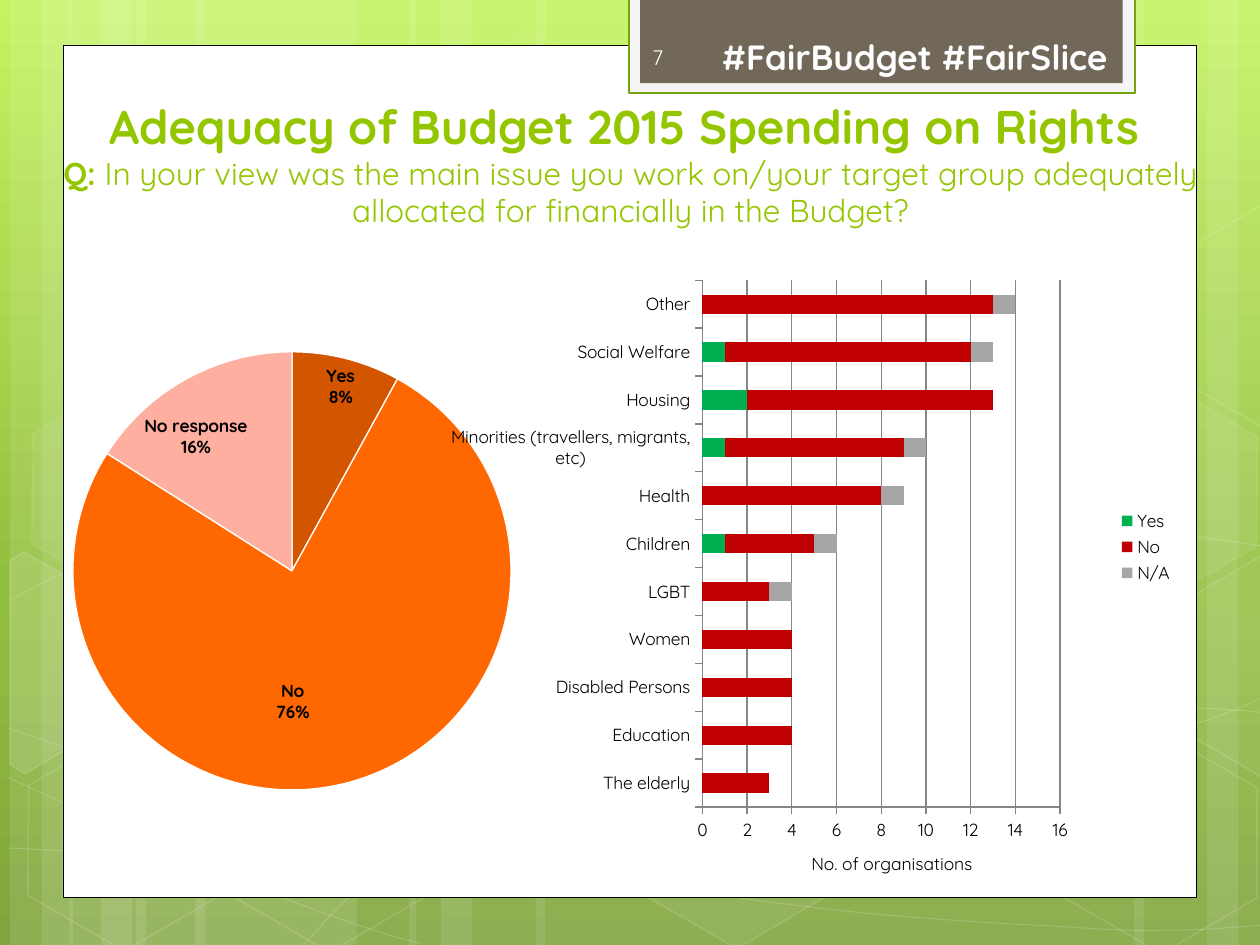
from copy import deepcopy

from lxml.etree import SubElement
from pptx import Presentation
from pptx.chart.data import CategoryChartData
from pptx.dml.color import RGBColor
from pptx.enum.chart import XL_CHART_TYPE, XL_LABEL_POSITION, XL_LEGEND_POSITION, XL_TICK_MARK
from pptx.enum.shapes import MSO_SHAPE
from pptx.enum.text import MSO_ANCHOR, MSO_AUTO_SIZE, PP_ALIGN
from pptx.oxml.ns import qn
from pptx.util import Inches, Pt

FONT = "Quicksand"
GREEN = "94C600"

# left, width of the pale vertical bands
BANDS = [(1.08, 1.75), (0.08, 0.5), (0.33, 0.83), (1.55, 1.75), (0.55, 0.5), (0.8, 0.83),
         (7.33, 1.75), (9.58, 0.5), (9, 0.83), (4.25, 3.08), (3.25, 0.5), (3.5, 0.83)]
# start point followed by three points for each Bezier segment
CURVES = [
    [(0.07, 6.73), (0.61, 6.76), (1.15, 6.79), (1.9, 6.78), (2.65, 6.77), (3.58, 6.75),
     (4.58, 6.65), (5.58, 6.55), (7, 6.36), (7.92, 6.17), (8.83, 5.98), (9.77, 5.68), (10.07, 5.51)],
    [(0.07, 4.77), (0.36, 4.61), (0.65, 4.46), (1.21, 4.31), (1.78, 4.16), (2.59, 3.94),
     (3.47, 3.87), (4.36, 3.8), (5.44, 3.79), (6.54, 3.87), (7.64, 3.95), (9.47, 4.26), (10.07, 4.34)],
    [(0.06, 6.17), (1.27, 6.72), (2.47, 7.27), (3.34, 7.49)],
    [(0.07, 5.78), (0.38, 5.89), (0.7, 6), (1.28, 6.16), (1.86, 6.31), (2.73, 6.56), (3.57, 6.73),
     (4.4, 6.9), (5.45, 7.08), (6.28, 7.18), (7.11, 7.29), (8, 7.33), (8.53, 7.36),
     (9.05, 7.4), (9.19, 7.38), (9.45, 7.38), (9.71, 7.37), (9.89, 7.35), (10.07, 7.34)],
    [(2.42, 7.49), (2.6, 7.29), (2.78, 7.09), (3.02, 6.91), (3.26, 6.73), (3.6, 6.53), (3.88, 6.39),
     (4.16, 6.25), (4.33, 6.19), (4.7, 6.09), (5.06, 5.99), (5.73, 5.85), (6.08, 5.78),
     (6.44, 5.71), (6.49, 5.71), (6.8, 5.69), (7.11, 5.66), (7.6, 5.63), (7.94, 5.62),
     (8.29, 5.61), (8.86, 5.62), (8.86, 5.62), (9.08, 5.62), (9.3, 5.62), (9.53, 5.62),
     (9.71, 5.63), (9.88, 5.64), (9.97, 5.65), (10.06, 5.66), (10.03, 5.65), (10.06, 5.66)],
]
# left, top, fill opacity, line opacity (percent)
HEXAGONS = [(3.34, 0.36, 4, 8), (4.97, 5.89, 6, 12), (0.11, 5.91, 0, 12), (0.14, 3.12, 7, 8),
            (1.74, 5.92, 0, 12), (7.53, 4.53, 10, 12), (8.34, 5.93, 0, 12), (8.34, 3.14, 7, 8)]
# corner points, fill opacity of the hexagons cut by the slide edge
CUT_HEXAGONS = [
    ([(0.08, 4.45), (0.19, 4.38), (0.96, 4.82), (0.95, 5.7), (0.2, 6.14), (0.08, 6.07)], 10),
    ([(9.26, 4.85), (10.01, 4.41), (10.09, 4.46), (10.09, 6.13), (10.02, 6.17), (9.26, 5.73)], 4),
    ([(9.26, 2.07), (10.01, 1.63), (10.1, 1.68), (10.09, 3.35), (10.02, 3.39), (9.26, 2.95)], 0),
]
# wedge colour and label shift as fractions of the chart
WEDGES = [("D45500", 0.02, 0), ("FF6700", -0.07, -0.09), ("FFAFA0", -0.09, 0.05)]


def color(value):
    return RGBColor.from_string(value)


def box(left, top, width, height):
    return [Inches(length) for length in (left, top, width, height)]


def set_all(target, **values):
    for name, value in values.items():
        setattr(target, name, value)


def set_opacity(properties, percent):
    for rgb in properties.iter(qn("a:srgbClr")):
        if percent < 100:
            SubElement(rgb, qn("a:alpha")).set("val", str(percent * 1000))


def paint(shape, fill=None, line=None, width=1, fill_opacity=100, line_opacity=100):
    shape.shadow.inherit = False
    if fill and fill_opacity:
        shape.fill.solid()
        shape.fill.fore_color.rgb = color(fill)
        set_opacity(shape._element.spPr, fill_opacity)
    else:
        shape.fill.background()
    if line:
        shape.line.color.rgb = color(line)
        shape.line.width = Pt(width)
        set_opacity(shape._element.spPr.find(qn("a:ln")), line_opacity)
    else:
        shape.line.fill.background()


def style_font(font, size, hex_color="000000", bold=False):
    set_all(font, name=FONT, size=Pt(size), bold=bold)
    font.color.rgb = color(hex_color)


def add_rectangle(slide, bounds, **style):
    paint(slide.shapes.add_shape(MSO_SHAPE.RECTANGLE, *box(*bounds)), **style)


def add_outline(slide, points, close, **style):
    (start, *rest) = [(Inches(x), Inches(y)) for x, y in points]
    builder = slide.shapes.build_freeform(*start)
    builder.add_line_segments(rest, close=close)
    shape = builder.convert_to_shape()
    paint(shape, line="FFFFFF", **style)
    return shape


def bend(shape):
    """Turn each three straight segments into one cubic Bezier."""
    outline = next(shape._element.iter(qn("a:moveTo"))).getparent()
    segments = outline.findall(qn("a:lnTo"))
    for first in range(0, len(segments), 3):
        curve = SubElement(outline, qn("a:cubicBezTo"))
        for segment in segments[first:first + 3]:
            curve.append(segment[0])
            outline.remove(segment)


def add_backdrop(slide):
    fill = slide.background.fill
    fill.gradient()
    fill.gradient_angle = 270
    stop_list = next(slide._element.iter(qn("a:gsLst")))
    stop_list.append(deepcopy(stop_list[0]))
    for stop, (position, value) in zip(fill.gradient_stops, [(0, "C3F35F"), (0.62, "93BF3F"), (1, "81A53E")]):
        stop.position = position
        stop.color.rgb = color(value)
    for left, width in BANDS:
        add_rectangle(slide, (left, 0, width, 7.5), fill="FFFFFF", fill_opacity=10)
    for curve in CURVES:
        bend(add_outline(slide, curve, False, width=0.5, line_opacity=20))
    for left, top, fill_opacity, line_opacity in HEXAGONS:
        hexagon = slide.shapes.add_shape(MSO_SHAPE.HEXAGON, *box(left, top, 1.75, 1.52))
        hexagon.rotation = 30
        hexagon.adjustments[0] = 0.285
        paint(hexagon, "FFFFFF", "FFFFFF", 1, fill_opacity, line_opacity)
    for points, opacity in CUT_HEXAGONS:
        add_outline(slide, points, True, fill="FFFFFF", fill_opacity=opacity, line_opacity=12)


def add_text(slide, bounds, text, size, hex_color, bold=False, align=PP_ALIGN.LEFT, anchor=MSO_ANCHOR.MIDDLE):
    frame = slide.shapes.add_textbox(*box(*bounds)).text_frame
    set_all(frame, word_wrap=True, vertical_anchor=anchor)
    paragraph = frame.paragraphs[0]
    paragraph.alignment = align
    run = paragraph.add_run()
    run.text = text
    style_font(run.font, size, hex_color, bold)


def add_header_tab(slide, left, top):
    add_rectangle(slide, (left, top, 4.02, 0.76), fill="F5F5F5", line="74A510", width=1.25)
    add_rectangle(slide, (left + 0.09, top, 3.83, 0.68), fill="71685A")
    add_text(slide, (left + 0.17, top + 0.27, 3.73, 0.4), "#FairBudget #FairSlice", 20, "FEFEFE", True,
             PP_ALIGN.RIGHT)
    add_text(slide, (left + 0.09, top + 0.27, 1.46, 0.4), "7", 12, "FEFEFE")


def add_title(slide, bounds):
    title = slide.shapes.title
    slide.shapes._spTree.append(title._element)
    set_all(title, **dict(zip(("left", "top", "width", "height"), box(*bounds))))
    frame = title.text_frame
    set_all(frame, auto_size=MSO_AUTO_SIZE.NONE, word_wrap=True, vertical_anchor=MSO_ANCHOR.BOTTOM,
            margin_bottom=Inches(0.36))
    paragraph = frame.paragraphs[0]
    paragraph.alignment = PP_ALIGN.CENTER
    question = ("In your view was the main issue you work on/your target group adequately "
                "allocated for financially in the Budget?")
    for text, size, bold in [("Adequacy of Budget 2015 Spending on Rights ", 27, True),
                             ("Q: ", 18, True), (question, 18, False)]:
        run = paragraph.add_run()
        run.text = text
        style_font(run.font, size, GREEN, bold)
        if size == 27:
            paragraph.add_line_break()


def add_manual_layout(layout, **values):
    manual = SubElement(layout, qn("c:manualLayout"))
    for tag, value in values.items():
        SubElement(manual, qn("c:" + tag)).set("val", str(value))


def add_chart(slide, bounds, kind, categories, series, plot_box):
    """Add a chart whose inner plot area takes the given fractions of its box."""
    data = CategoryChartData()
    data.categories = categories
    for name, values in series:
        data.add_series(name, values)
    chart = slide.shapes.add_chart(kind, *box(*bounds), data).chart
    set_all(chart, has_title=False, has_legend=False)
    style_font(chart.font, 10)
    area = next(chart._chartSpace.iter(qn("c:plotArea")))
    for old in area.findall(qn("c:layout")):
        area.remove(old)
    layout = area.makeelement(qn("c:layout"))
    area.insert(0, layout)
    add_manual_layout(layout, layoutTarget="inner", xMode="edge", yMode="edge", **dict(zip("xywh", plot_box)))
    return chart


def label_wedge(point, shift_x, shift_y):
    label = point.data_label
    label.position = XL_LABEL_POSITION.INSIDE_END
    style_font(label.font, 10, bold=True)
    element = next(item for item in point._element.iter(qn("c:dLbl"))
                   if item.find(qn("c:idx")).get("val") == str(point._idx))
    for tag, value in (("showVal", "0"), ("showCatName", "1"), ("showPercent", "1")):
        element.find(qn("c:" + tag)).set("val", value)
    SubElement(element, qn("c:separator")).text = "\n"
    layout = element.makeelement(qn("c:layout"))
    element.insert(1, layout)
    add_manual_layout(layout, x=shift_x, y=shift_y)


def add_answer_pie(slide, bounds):
    chart = add_chart(slide, bounds, XL_CHART_TYPE.PIE, ["Yes", "No", "No response"],
                      [("Series 1", [8, 76, 16])], (0.037, 0.092, 0.865, 0.878))
    plot = chart.plots[0]
    plot.vary_by_categories = True
    for index, (value, shift_x, shift_y) in enumerate(WEDGES):
        point = plot.series[0].points[index]
        point.format.fill.solid()
        point.format.fill.fore_color.rgb = color(value)
        point.format.line.color.rgb = color("FFFFFF")
        point.format.line.width = Pt(0.75)
        label_wedge(point, shift_x, shift_y)


def add_issue_bars(slide, bounds):
    categories = ["The elderly", "Education", "Disabled Persons", "Women", "LGBT", "Children", "Health",
                  "Minorities (travellers, migrants, etc)", "Housing", "Social Welfare", "Other"]
    series = [("Yes", [None] * 5 + [1, None, 1, 2, 1, None]),
              ("No", [3, 4, 4, 4, 3, 4, 8, 8, 11, 11, 13]),
              ("N/A", [None] * 4 + [1, 1, 1, 1, None, 1, 1])]
    chart = add_chart(slide, bounds, XL_CHART_TYPE.BAR_STACKED, categories, series, (0.338, 0.044, 0.49, 0.901))
    set_all(chart.plots[0], gap_width=150, overlap=100, vary_by_categories=False)
    for bars, value in zip(chart.plots[0].series, ["00B050", "C00000", "A6A6A6"]):
        bars.format.fill.solid()
        bars.format.fill.fore_color.rgb = color(value)
    set_all(chart.value_axis, minimum_scale=0, maximum_scale=16, major_unit=2, has_major_gridlines=True)
    for axis in (chart.category_axis, chart.value_axis):
        axis.major_tick_mark = XL_TICK_MARK.OUTSIDE
    for part in (chart.category_axis, chart.value_axis, chart.value_axis.major_gridlines):
        part.format.line.color.rgb = color("868686")
        part.format.line.width = Pt(0.75)
    chart.has_legend = True
    set_all(chart.legend, position=XL_LEGEND_POSITION.RIGHT, include_in_layout=False)
    left, top, width, height = bounds
    add_text(slide, (left + 2.76, top + height + 0.05, 1.89, 0.27), "No. of organisations", 10, "000000",
             anchor=MSO_ANCHOR.TOP)


def main():
    presentation = Presentation()
    set_all(presentation, slide_width=Inches(10), slide_height=Inches(7.5))
    slide = presentation.slides.add_slide(presentation.slide_layouts[5])
    add_backdrop(slide)
    add_rectangle(slide, (0.5, 0.36, 9, 6.76), fill="FFFFFF", line="000000", width=0.5)
    add_header_tab(slide, 4.99, -0.02)
    add_title(slide, (0.36, 0.92, 9.29, 1.26))
    add_answer_pie(slide, (0.43, 2.02, 4.02, 4.73))
    add_issue_bars(slide, (3.58, 2.02, 5.83, 4.65))
    presentation.save("out.pptx")


if __name__ == "__main__":
    main()
